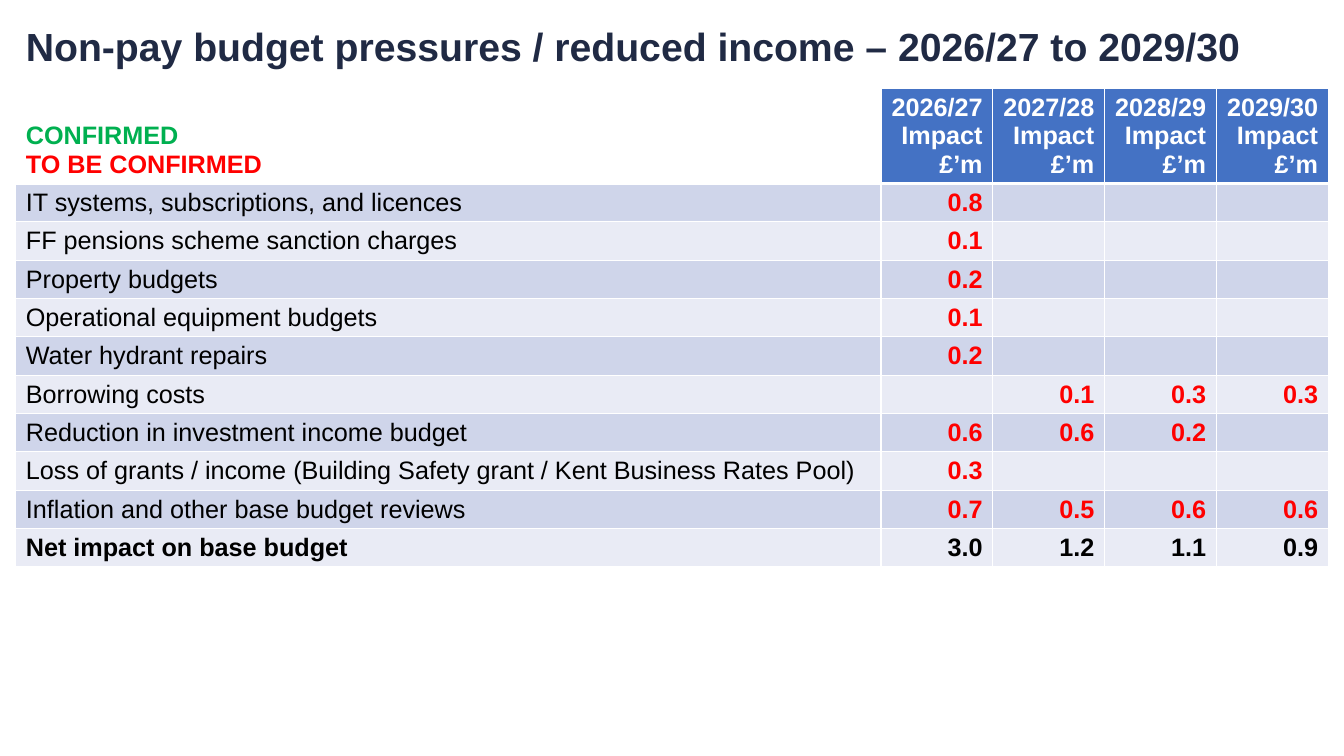
from lxml import etree
from pptx import Presentation
from pptx.dml.color import RGBColor
from pptx.enum import text as t
from pptx.oxml import ns
from pptx.util import Pt

NAVY = RGBColor(0x20, 0x2A, 0x44)
BLUE = RGBColor(0x44, 0x72, 0xC4)
BAND = RGBColor(0xCF, 0xD5, 0xEA)
PALE = RGBColor(0xE9, 0xEB, 0xF5)
GREEN = RGBColor(0x00, 0xB0, 0x50)
RED = RGBColor(0xFF, 0x00, 0x00)
BLACK = RGBColor(0x00, 0x00, 0x00)
WHITE = RGBColor(0xFF, 0xFF, 0xFF)
FONT = "Arial"

YEARS = ["2026/27", "2027/28", "2028/29", "2029/30"]
COSTS = [
    ("IT systems, subscriptions, and licences", "0.8", "", "", ""),
    ("FF pensions scheme sanction charges", "0.1", "", "", ""),
    ("Property budgets", "0.2", "", "", ""),
    ("Operational equipment budgets", "0.1", "", "", ""),
    ("Water hydrant repairs", "0.2", "", "", ""),
    ("Borrowing costs", "", "0.1", "0.3", "0.3"),
    ("Reduction in investment income budget", "0.6", "0.6", "0.2", ""),
    ("Loss of grants / income (Building Safety grant / Kent Business Rates Pool)",
     "0.3", "", "", ""),
    ("Inflation and other base budget reviews", "0.7", "0.5", "0.6", "0.6"),
    ("Net impact on base budget", "3.0", "1.2", "1.1", "0.9"),
]
WIDTHS = [618, 79.8, 79.8, 79.8, 80]
HEAD, ROW = 67, 27.4


def write(frame, lines, size=18, color=BLACK, bold=True, align=t.PP_ALIGN.LEFT,
          space=None, font=FONT):
    """Fill a text frame; a line is a string or a (string, colour) pair."""
    for i, line in enumerate(lines):
        words, tint = line if isinstance(line, tuple) else (line, color)
        para = frame.paragraphs[0] if i == 0 else frame.add_paragraph()
        para.alignment = align
        if space:
            para.line_spacing = space
        if not words:
            end = etree.SubElement(para._p, ns.qn("a:endParaRPr"), sz=str(size * 100))
            etree.SubElement(end, ns.qn("a:latin"), typeface=font)
            continue
        run = para.add_run()
        run.text = words
        run.font.name, run.font.size, run.font.bold = font, Pt(size), bold
        run.font.color.rgb = tint


class Deck:
    def __init__(self):
        self.prs = Presentation()
        self.prs.slide_width, self.prs.slide_height = Pt(960), Pt(540)
        self.slide = self.prs.slides.add_slide(self.prs.slide_layouts[5])

    def title(self, words, left, top, width, height):
        box = self.slide.shapes.title
        box.left, box.top, box.width, box.height = map(Pt, (left, top, width, height))
        frame = box.text_frame
        frame.word_wrap = True
        frame.auto_size = t.MSO_AUTO_SIZE.NONE
        frame.vertical_anchor = t.MSO_ANCHOR.MIDDLE
        write(frame, [words], size=28, color=NAVY, space=0.9)

    def table(self, left, top, widths, heights):
        grid = self.slide.shapes.add_table(
            len(heights), len(widths), Pt(left), Pt(top),
            Pt(sum(widths)), Pt(sum(heights))).table
        for col, width in zip(grid.columns, widths):
            col.width = Pt(width)
        for row, height in zip(grid.rows, heights):
            row.height = Pt(height)
        return grid

    def cell(self, cell, lines, fill, top=1, base=1, **style):
        """Set the borders, fill and text of one table cell."""
        props = cell._tc.get_or_add_tcPr()
        for side, width in zip("LRTB", (1, 1, top, base)):
            line = etree.SubElement(props, ns.qn("a:ln" + side), w=str(Pt(width)))
            solid = etree.SubElement(line, ns.qn("a:solidFill"))
            etree.SubElement(solid, ns.qn("a:srgbClr"), val=str(WHITE))
        cell.fill.solid()
        cell.fill.fore_color.rgb = fill
        write(cell.text_frame, lines, **style)


def main():
    deck = Deck()
    deck.title("Non-pay budget pressures / reduced income – 2026/27 to 2029/30",
               11.3, 5.4, 928, 59)
    grid = deck.table(11.3, 63.4, WIDTHS, [HEAD] + [ROW] * len(COSTS))

    key = grid.cell(0, 0)
    deck.cell(key, [("CONFIRMED", GREEN), ("TO BE CONFIRMED", RED)], WHITE, base=3)
    key.vertical_anchor = t.MSO_ANCHOR.BOTTOM
    for c, year in enumerate(YEARS, 1):
        deck.cell(grid.cell(0, c), [year, "Impact", "£’m"], BLUE, base=3,
                  color=WHITE, align=t.PP_ALIGN.RIGHT)

    for r, (name, *sums) in enumerate(COSTS, 1):
        total = r == len(COSTS)
        fill = BAND if r % 2 else PALE
        top = 3 if r == 1 else 1
        deck.cell(grid.cell(r, 0), [name], fill, top=top, bold=total)
        for c, value in enumerate(sums, 1):
            deck.cell(grid.cell(r, c), [value], fill, top=top,
                      color=BLACK if total else RED, align=t.PP_ALIGN.RIGHT)
    deck.prs.save("out.pptx")


if __name__ == "__main__":
    main()
